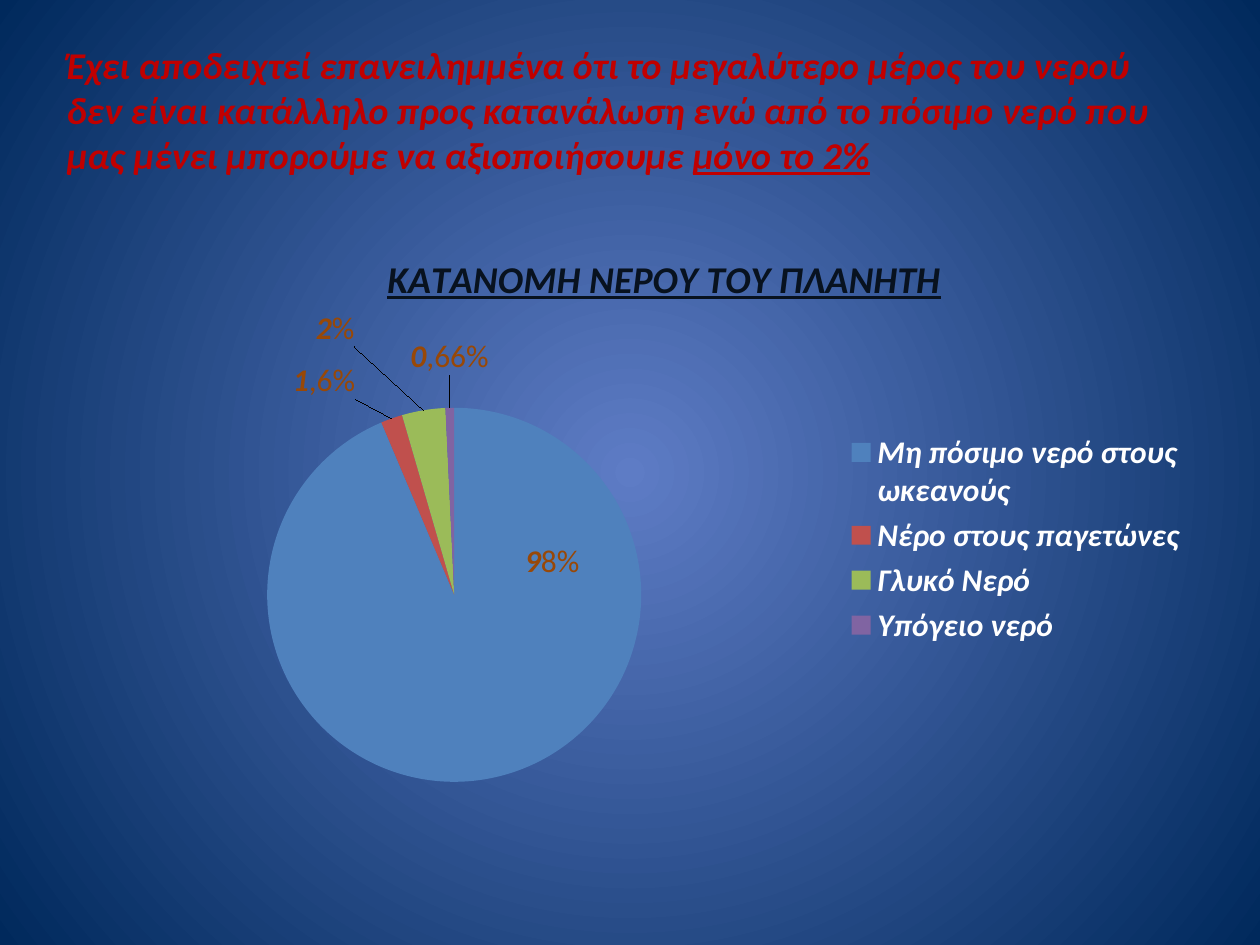
from lxml import etree
from pptx import Presentation
from pptx.chart.data import CategoryChartData
from pptx.dml.color import RGBColor
from pptx.enum import chart as ch, text
from pptx.oxml import parse_xml
from pptx.oxml.ns import nsdecls, qn
from pptx.util import Cm, Pt


def write(par, words, size, color, bold=True, italic=True, line=False):
    run = par.add_run()
    run.text = words
    font = run.font
    font.name, font.size = "Calibri", Pt(size)
    font.bold, font.italic, font.underline = bold, italic, line
    font.color.rgb = RGBColor.from_string(color)


def place(node, spot, inner=False, **box):
    for old in node.findall(qn("c:layout")):
        node.remove(old)
    keys = [("layoutTarget", "inner")] if inner else []
    if spot != "label":
        keys += [("xMode", "edge"), ("yMode", "edge")]
    keys += box.items()
    body = "".join(f'<c:{key} val="{val}"/>' for key, val in keys)
    node.insert(0 if spot == "first" else 1, parse_xml(
        f'<c:layout {nsdecls("c")}><c:manualLayout>{body}</c:manualLayout></c:layout>'))


prs = Presentation()
prs.slide_width, prs.slide_height = Cm(25.4), Cm(19.05)
slide = prs.slides.add_slide(prs.slide_layouts[5])

fill = slide.background.fill
fill.gradient()
for stop, color in zip(fill.gradient_stops, ("5E7CC5", "00295C")):
    stop.color.rgb = RGBColor.from_string(color)
    stop.position = 0 if color == "5E7CC5" else 1
grad = slide.element.find(".//" + qn("a:gradFill"))
grad.remove(grad.find(qn("a:lin")))
ring = etree.SubElement(grad, qn("a:path"), {"path": "circle"})
etree.SubElement(ring, qn("a:fillToRect"), {side: "50000" for side in "ltrb"})

title = slide.shapes.title
title.left, title.top, title.width, title.height = Cm(1.09), Cm(0.74), Cm(22.86), Cm(3.4)
frame = title.text_frame
frame.word_wrap = True
frame.auto_size = text.MSO_AUTO_SIZE.NONE
frame.vertical_anchor = text.MSO_ANCHOR.MIDDLE
frame.margin_bottom = Cm(0.6)
par = frame.paragraphs[0]
par.alignment = text.PP_ALIGN.LEFT
write(par, "Έχει αποδειχτεί επανειλημμένα ότι το μεγαλύτερο μέρος του νερού "
      "δεν είναι κατάλληλο προς κατανάλωση ενώ από το πόσιμο νερό που "
      "μας μένει μπορούμε να αξιοποιήσουμε ", 21.6, "C00000")
write(par, "μόνο το 2%", 21.6, "C00000", line=True)

rows = [
    ("Μη πόσιμο νερό στους ωκεανούς", 25, "4F81BD", "98%", 0.07, -0.2),
    ("Νέρο στους παγετώνες", 0.5, "C0504D", "1,6%", -0.03, -0.02),
    ("Γλυκό Νερό", 1, "9BBB59", "2%", -0.06, -0.09),
    ("Υπόγειο νερό", 0.2, "8064A2", "0,66%", 0, -0.04),
]
data = CategoryChartData()
data.categories = [row[0] for row in rows]
data.add_series("Series 1", [row[1] for row in rows])
chart = slide.shapes.add_chart(ch.XL_CHART_TYPE.PIE, Cm(1.27), Cm(4.45),
                               Cm(22.86), Cm(12.57), data).chart
chart.font.name, chart.font.size = "Calibri", Pt(18)
chart.font.color.rgb = RGBColor.from_string("FFFFFF")

chart.has_title = True
head = chart.chart_title
write(head.text_frame.paragraphs[0], "ΚΑΤΑΝΟΜΗ ΝΕΡΟΥ ΤΟΥ ΠΛΑΝΗΤΗ", 21.6, "08121F", line=True)
place(head._element, "second", x=0.28, y=0.04)

chart.has_legend = True
legend = chart.legend
legend.position = ch.XL_LEGEND_POSITION.RIGHT
legend.include_in_layout = False
legend.font.name, legend.font.size = "Calibri", Pt(18)
legend.font.bold = legend.font.italic = True
legend.font.color.rgb = RGBColor.from_string("FFFFFF")
place(legend._element, "second", x=0.69, y=0.33, w=0.3, h=0.36)

plot = chart.plots[0]
plot.vary_by_categories = True
place(chart._chartSpace.find(".//" + qn("c:plotArea")), "first", inner=True,
      x=0.18, y=0.3, w=0.33, h=0.6)

pie = plot.series[0]
pie.data_labels.show_value = True
spots = ch.XL_LABEL_POSITION
for num, (name, val, color, mark, dx, dy) in enumerate(rows):
    point = pie.points[num]
    point.format.fill.solid()
    point.format.fill.fore_color.rgb = RGBColor.from_string(color)
    label = point.data_label
    par = label.text_frame.paragraphs[0]
    write(par, mark[0], 18, "984807")
    write(par, mark[1:], 18, "984807", bold=False, italic=False)
    label.position = spots.OUTSIDE_END if num else spots.CENTER
    place(pie._element.findall(".//" + qn("c:dLbl"))[num], "label", x=dx, y=dy)
for lead in pie._element.iter(qn("c:showLeaderLines")):
    lead.set("val", "1")

prs.save("out.pptx")
